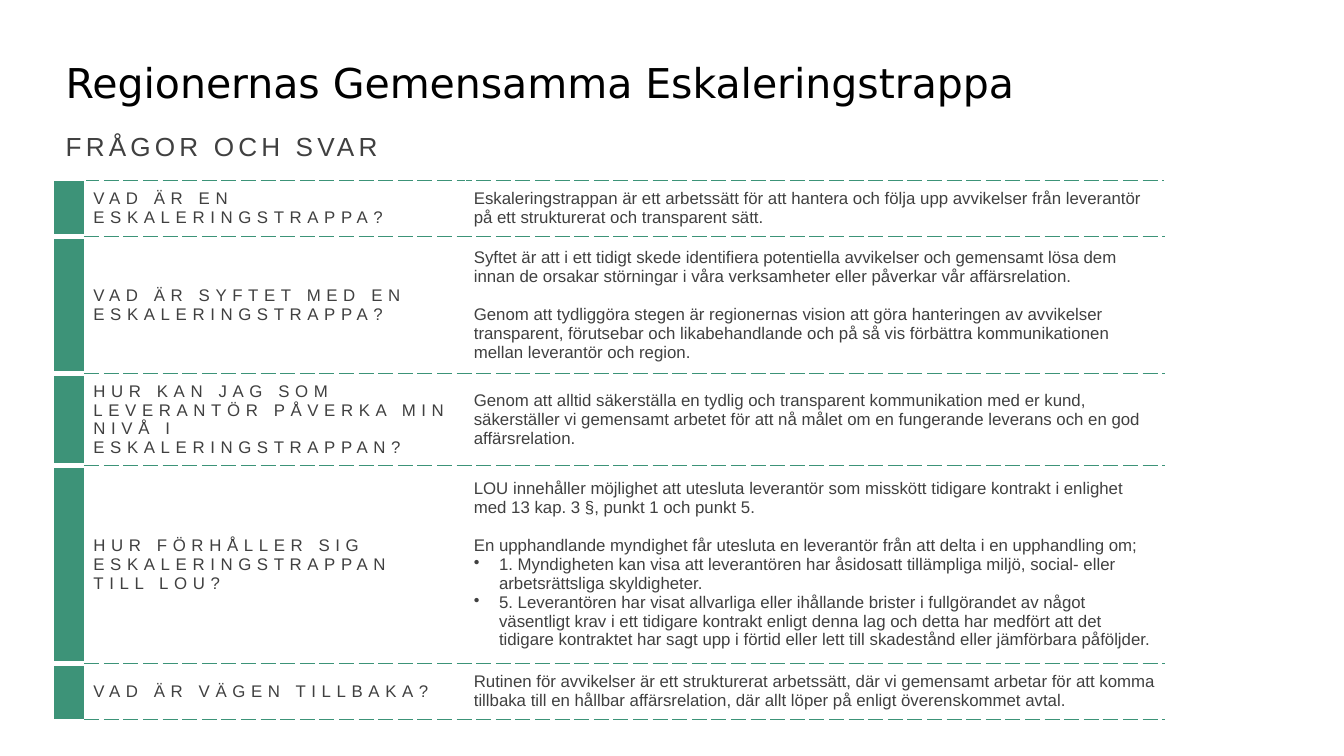
from lxml import etree
from pptx import Presentation
from pptx import util as u
from pptx.dml.color import RGBColor
from pptx.enum import text as t
from pptx.oxml import ns

COLORS = {"green": "3D9378", "dash": "3C9378", "body": "404040",
          "title": "000000", "white": "FFFFFF"}
LEFT = 28
COLUMN_WIDTHS = [17.2, 203.8, 374.4]
LINE = 10.3  # one line of 9 pt text
GAP, BULLET = "gap", "bullet"  # paragraph kinds

# Each row: height, question paragraphs, answer paragraphs (text, kind)
ROWS = [
    (30.2, ["VAD ÄR EN ESKALERINGSTRAPPA?"],
     [("Eskaleringstrappan är ett arbetssätt för att hantera och följa upp avvikelser "
       "från leverantör på ett strukturerat och transparent sätt.", None)]),
    (73.5, ["VAD ÄR SYFTET MED EN ESKALERINGSTRAPPA?"],
     [("Syftet är att i ett tidigt skede identifiera potentiella avvikelser och gemensamt "
       "lösa dem innan de orsakar störningar i våra verksamheter eller påverkar vår "
       "affärsrelation.", None),
      ("Genom att tydliggöra stegen är regionernas vision att göra hanteringen av "
       "avvikelser transparent, förutsebar och likabehandlande och på så vis förbättra "
       "kommunikationen mellan leverantör och region.", GAP)]),
    (41, ["HUR KAN JAG SOM LEVERANTÖR PÅVERKA MIN NIVÅ I ESKALERINGSTRAPPAN?"],
     [("Genom att alltid säkerställa en tydlig och transparent kommunikation med er kund, "
       "säkerställer vi gemensamt arbetet för att nå målet om en fungerande leverans och "
       "en god affärsrelation.", None)]),
    (105.8, ["HUR FÖRHÅLLER SIG ESKALERINGSTRAPPAN", "TILL LOU?"],
     [("LOU innehåller möjlighet att utesluta leverantör som misskött tidigare kontrakt i "
       "enlighet med 13 kap. 3 §, punkt 1 och punkt 5.", None),
      ("En upphandlande myndighet får utesluta en leverantör från att delta i en "
       "upphandling om;", GAP),
      ("1. Myndigheten kan visa att leverantören har åsidosatt tillämpliga miljö, social- "
       "eller arbetsrättsliga skyldigheter.", BULLET),
      ("5. Leverantören har visat allvarliga eller ihållande brister i fullgörandet av "
       "något väsentligt krav i ett tidigare kontrakt enligt denna lag och detta har "
       "medfört att det tidigare kontraktet har sagt upp i förtid eller lett till "
       "skadestånd eller jämförbara påföljder.", BULLET)]),
    (30.2, ["VAD ÄR VÄGEN TILLBAKA?"],
     [("Rutinen för avvikelser är ett strukturerat arbetssätt, där vi gemensamt arbetar "
       "för att komma tillbaka till en hållbar affärsrelation, där allt löper på enligt "
       "överenskommet avtal.", None)]),
]


def style_paragraph(paragraph, size, font="Arial", color="body", spacing=0):
    paragraph.alignment = t.PP_ALIGN.LEFT
    paragraph.font.size = u.Pt(size)
    paragraph.font.name = font
    paragraph.font.color.rgb = RGBColor.from_string(COLORS[color])
    for run in paragraph.runs:
        run.font._element.set("spc", str(round(spacing * 100)))


def set_bullet(paragraph, character=None, indent=0):
    properties = paragraph._p.get_or_add_pPr()
    properties.set("marL", str(u.Pt(indent)))
    properties.set("indent", str(-u.Pt(indent)))
    # The bullet comes before the default run properties
    bullet = etree.Element(ns.qn("a:buChar" if character else "a:buNone"))
    if character:
        bullet.set("char", character)
    defaults = properties.find(ns.qn("a:defRPr"))
    if defaults is None:
        properties.append(bullet)
    else:
        defaults.addprevious(bullet)


def fill_placeholder(shape, box, content, anchor, **style):
    shape.left, shape.top, shape.width, shape.height = map(u.Pt, box)
    frame = shape.text_frame
    frame.text = content
    frame.word_wrap = True
    frame.auto_size = t.MSO_AUTO_SIZE.NONE
    frame.vertical_anchor = anchor
    paragraph = frame.paragraphs[0]
    paragraph.space_before = u.Pt(0)
    style_paragraph(paragraph, **style)
    return paragraph


def set_borders(cell, top, bottom):
    """Draw white sides; top and bottom are (colour, width, dash) triples."""
    side = ("white", 1, "solid")
    properties = cell._tc.get_or_add_tcPr()
    borders = [("lnL", side), ("lnR", side), ("lnT", top), ("lnB", bottom)]
    for position, (tag, (color, width, dash)) in enumerate(borders):
        line = etree.Element(ns.qn("a:" + tag), w=str(u.Pt(width)))
        fill = etree.SubElement(line, ns.qn("a:solidFill"))
        etree.SubElement(fill, ns.qn("a:srgbClr"), val=COLORS[color])
        etree.SubElement(line, ns.qn("a:prstDash"), val=dash)
        properties.insert(position, line)


def fill_cell(cell, color, paragraphs=(), spacing=0):
    cell.fill.solid()
    cell.fill.fore_color.rgb = RGBColor.from_string(COLORS[color])
    cell.vertical_anchor = t.MSO_ANCHOR.MIDDLE
    cell.margin_left = cell.margin_right = u.Pt(4.5)
    cell.margin_top = cell.margin_bottom = u.Pt(4.5)
    frame = cell.text_frame
    if not paragraphs:
        style_paragraph(frame.paragraphs[0], 9)
    for index, (content, kind) in enumerate(paragraphs):
        paragraph = frame.add_paragraph() if index else frame.paragraphs[0]
        paragraph.text = content
        if kind == GAP:
            paragraph.space_before = u.Pt(LINE)
        style_paragraph(paragraph, 9, spacing=spacing)
        if kind == BULLET:
            set_bullet(paragraph, "•", 13.5)


def add_question_table(slide):
    height = sum(row[0] for row in ROWS)
    shape = slide.shapes.add_table(len(ROWS), 3, u.Pt(LEFT + 0.4), u.Pt(96.5),
                                   u.Pt(sum(COLUMN_WIDTHS)), u.Pt(height))
    table = shape.table
    table.first_row = table.horz_banding = False
    for column, width in zip(table.columns, COLUMN_WIDTHS):
        column.width = u.Pt(width)

    dashed = ("dash", 0.75, "dash")
    thin, thick = ("white", 1, "solid"), ("white", 3, "solid")
    last = len(ROWS) - 1
    for index, (row_height, questions, answers) in enumerate(ROWS):
        table.rows[index].height = u.Pt(row_height)
        marker, question, answer = table.rows[index].cells
        fill_cell(marker, "green")
        fill_cell(question, "white", [(line, None) for line in questions], spacing=3)
        fill_cell(answer, "white", answers)
        set_borders(marker, thick if index else thin, thin if index == last else thick)
        set_borders(question, dashed, dashed)
        set_borders(answer, dashed, dashed)


def main():
    presentation = Presentation()
    presentation.slide_width, presentation.slide_height = u.Pt(720), u.Pt(405)
    slide = presentation.slides.add_slide(presentation.slide_layouts[1])

    # Heading and subheading
    title = fill_placeholder(slide.shapes.title, (LEFT, 25, 547, 41),
                             "Regionernas Gemensamma Eskaleringstrappa",
                             t.MSO_ANCHOR.MIDDLE, size=22, font="DejaVu Sans",
                             color="title")
    title.line_spacing = 0.9
    subtitle = fill_placeholder(slide.placeholders[1], (LEFT, 66.5, 608, 21.5),
                                "FRÅGOR OCH SVAR", t.MSO_ANCHOR.TOP,
                                size=14, spacing=2.2)
    set_bullet(subtitle)

    # Questions and answers
    add_question_table(slide)
    presentation.save("out.pptx")


if __name__ == "__main__":
    main()
